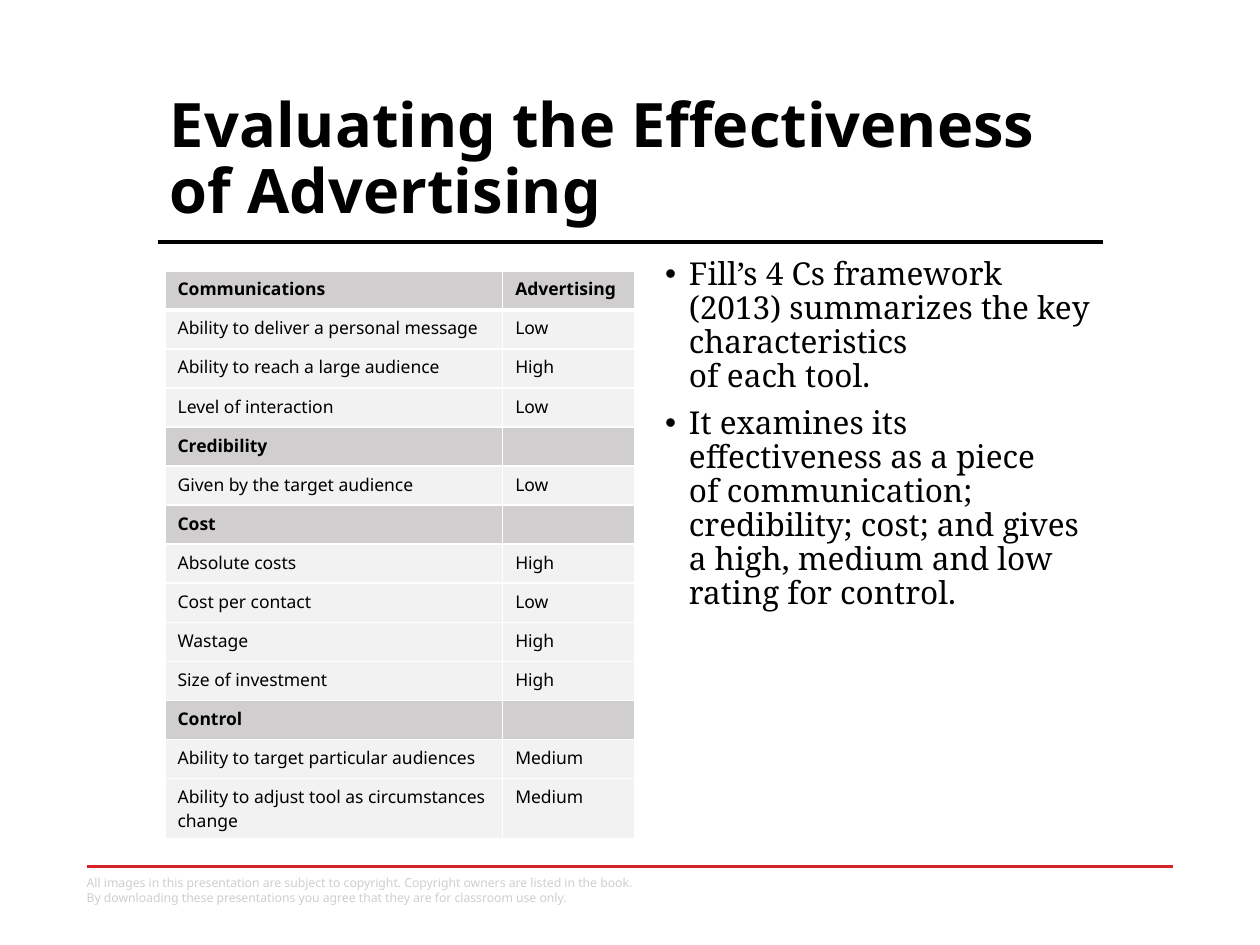
from copy import deepcopy
from lxml.etree import SubElement as Sub
from pptx import Presentation
from pptx.dml.color import RGBColor as RGB
from pptx.enum.shapes import MSO_CONNECTOR as Conn
from pptx.enum.text import MSO_ANCHOR as Anchor, MSO_AUTO_SIZE as Auto
from pptx.oxml.ns import qn
from pptx.util import Inches, Pt

THEME = {
    "ink": "000000", "red": "D7222A", "head": "D0CECE", "cell": "F2F2F2", "edge": "FFFFFF",
    "title": {"name": "Noto Sans", "size": Pt(35), "bold": True},
    "body": {"name": "Noto Serif", "size": Pt(18), "bold": False},
    "label": {"name": "Noto Sans", "size": Pt(10), "bold": True},
    "value": {"name": "Noto Sans", "size": Pt(10), "bold": False},
    "foot": {"name": "Noto Sans", "size": Pt(7), "bold": False},
}


def write(para, text, look, tint="ink"):
    para.text = text
    for run in para.runs:
        for key, val in THEME[look].items():
            setattr(run.font, key, val)
        run.font.color.rgb = RGB.from_string(THEME[tint])
    for gap in para._p.findall(qn("a:br")):
        gap.append(deepcopy(para.runs[0]._r.rPr))
    if not text:
        Sub(para._p, qn("a:endParaRPr"), sz=str(int(THEME[look]["size"].pt * 100)))


def add_text(left, top, width, height, **frame):
    box = slide.shapes.add_textbox(Inches(left), Inches(top), Inches(width), Inches(height))
    for key, val in {"word_wrap": True, "auto_size": Auto.NONE, **frame}.items():
        setattr(box.text_frame, key, val)
    return box.text_frame


deck = Presentation()
deck.slide_width, deck.slide_height = Inches(10), Inches(7.5)
slide = deck.slides.add_slide(deck.slide_layouts[6])

for left, right, y, tint, width in [(0.69, 9.31, 6.88, "red", 1.75), (1.25, 8.75, 1.92, "ink", 2)]:
    rule = slide.shapes.add_connector(Conn.STRAIGHT, Inches(left), Inches(y), Inches(right), Inches(y))
    rule.line.color.rgb = RGB.from_string(THEME[tint])
    rule.line.width = Pt(width)
    Sub(rule._element.spPr, qn("a:effectLst"))

points = [
    "Fill’s 4 Cs framework (2013) summarizes the key characteristics \nof each tool.",
    "It examines its effectiveness as a piece \nof communication; credibility; cost; "
    "and gives a high, medium and low rating for control.",
]
body = add_text(5.18, 2, 3.57, 4.76)
for i, point in enumerate(points):
    para = body.add_paragraph() if i else body.paragraphs[0]
    props = para._p.get_or_add_pPr()
    props.set("marL", str(Inches(0.19)))
    props.set("indent", str(-Inches(0.19)))
    Sub(props, qn("a:buFont"), typeface="Arial")
    Sub(props, qn("a:buChar"), char="•")
    para.line_spacing = 0.9
    if i:
        para.space_before = Pt(7.5)
    write(para, point, "body")

title = add_text(1.25, 0.4, 7.49, 1.45, vertical_anchor=Anchor.BOTTOM).paragraphs[0]
title.line_spacing = 0.9
write(title, "Evaluating the Effectiveness of Advertising", "title")

rows = [
    ("Communications", "Advertising"),
    ("Ability to deliver a personal message", "Low"),
    ("Ability to reach a large audience", "High"),
    ("Level of interaction", "Low"),
    ("Credibility", ""),
    ("Given by the target audience", "Low"),
    ("Cost", ""),
    ("Absolute costs", "High"),
    ("Cost per contact", "Low"),
    ("Wastage", "High"),
    ("Size of investment", "High"),
    ("Control", ""),
    ("Ability to target particular audiences", "Medium"),
    ("Ability to adjust tool as circumstances change", "Medium"),
]
grid = slide.shapes.add_table(
    len(rows), 2, Inches(1.31), Inches(2.15), Inches(3.73), Inches(4.45)).table
for col, width in zip(grid.columns, (2.68, 1.05)):
    col.width = Inches(width)
for r, row in enumerate(rows):
    grid.rows[r].height = Inches(0.42 if r == len(rows) - 1 else 0.31)
    head = r == 0 or not row[1]
    for c, text in enumerate(row):
        cell = grid.cell(r, c)
        write(cell.text_frame.paragraphs[0], text, "label" if head else "value")
        props = cell._tc.get_or_add_tcPr()
        for side in "LRTB":
            thick = (r, side) in [(0, "B"), (1, "T")]
            edge = Sub(props, qn("a:ln" + side), w=str(Pt(3 if thick else 1)))
            Sub(Sub(edge, qn("a:solidFill")), qn("a:srgbClr"), val=THEME["edge"])
        cell.fill.solid()
        cell.fill.fore_color.rgb = RGB.from_string(THEME["head" if head else "cell"])

foot = add_text(0.59, 6.9, 5, 0.34, auto_size=Auto.SHAPE_TO_FIT_TEXT)
write(foot.paragraphs[0],
      "All images in this presentation are subject to copyright. "
      "Copyright owners are listed in the book. \n"
      "By downloading these presentations you agree that they are for classroom use only.",
      "foot", "head")

deck.save("out.pptx")
